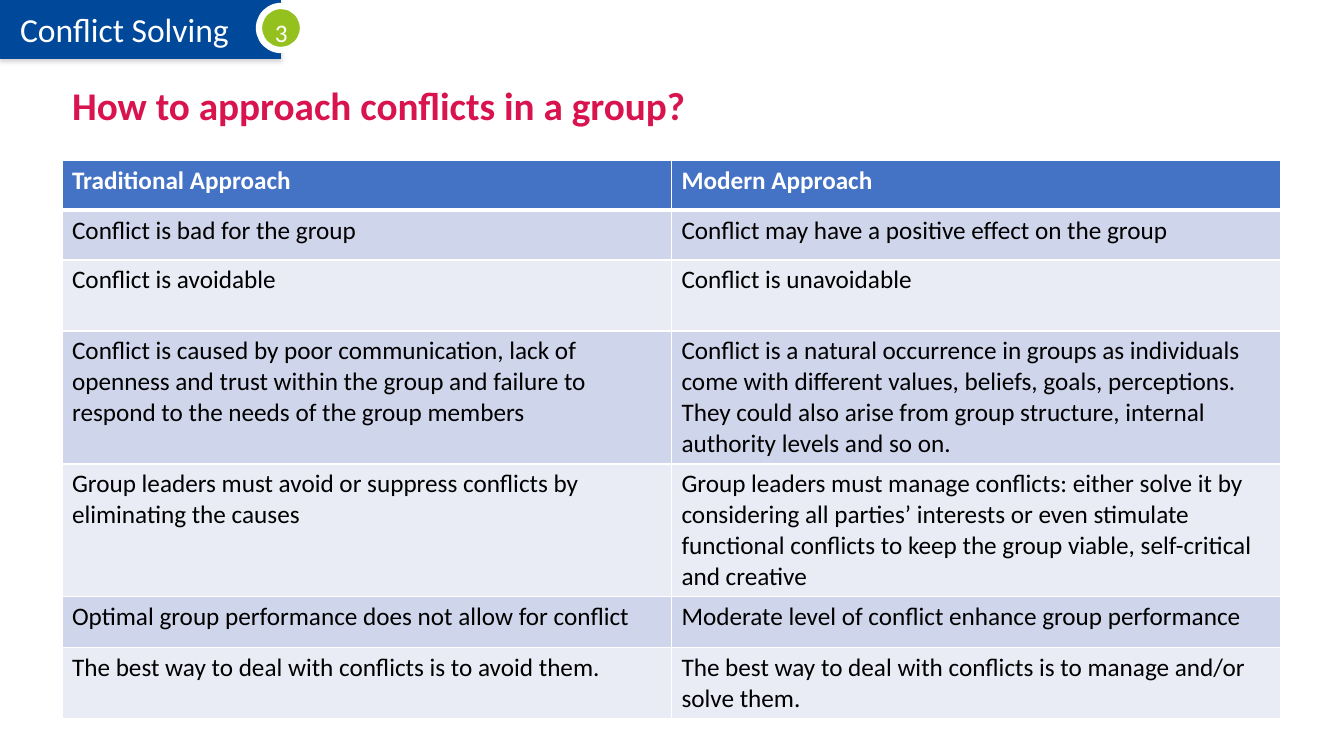
from lxml.etree import SubElement
from pptx import Presentation
from pptx.dml.color import RGBColor
from pptx.enum.shapes import MSO_SHAPE
from pptx.enum.text import MSO_ANCHOR, PP_ALIGN
from pptx.oxml import parse_xml
from pptx.oxml.ns import nsdecls, qn
from pptx.util import Pt

PX = 914400 / 100.8
NAVY = RGBColor(0x00, 0x48, 0x99)
GREEN = RGBColor(0x95, 0xC1, 0x1F)
CRIMSON = RGBColor(0xD8, 0x13, 0x4D)
BLUE = RGBColor(0x44, 0x72, 0xC4)
BAND_DARK = RGBColor(0xCF, 0xD5, 0xEA)
BAND_LIGHT = RGBColor(0xE9, 0xEB, 0xF5)
WHITE = RGBColor(0xFF, 0xFF, 0xFF)
BLACK = RGBColor(0x00, 0x00, 0x00)


def px(*lengths):
    """Turn pixel lengths into a list of EMU lengths."""
    return [round(n * PX) for n in lengths]


def write(tf, text, size=18, color=BLACK, bold=False, spacing=1.0, anchor=MSO_ANCHOR.TOP):
    tf.word_wrap = True
    tf.vertical_anchor = anchor
    p = tf.paragraphs[0]
    p.alignment = PP_ALIGN.LEFT
    p.line_spacing = spacing
    r = p.add_run()
    r.text = text
    r.font.name = "Calibri"
    r.font.size = Pt(size)
    r.font.bold = bold
    r.font.color.rgb = color


prs = Presentation()
prs.slide_width, prs.slide_height = px(1344, 756)
slide = prs.slides.add_slide(prs.slide_layouts[5])

# Section banner with its numbered badge
banner = slide.shapes.add_shape(MSO_SHAPE.RECTANGLE, *px(0, 0, 281, 59))
banner.fill.solid()
banner.fill.fore_color.rgb = NAVY
banner.line.fill.background()
banner.shadow.inherit = False
effects = banner.element.spPr.find(qn("a:effectLst"))
effects.append(parse_xml(
    f'<a:outerShdw {nsdecls("a")} blurRad="39370" dist="22860" dir="5400000" rotWithShape="0">'
    '<a:srgbClr val="808080"><a:alpha val="35000"/></a:srgbClr></a:outerShdw>'))
banner.text_frame.margin_left = px(20)[0]
write(banner.text_frame, "Conflict Solving", size=24, color=WHITE, anchor=MSO_ANCHOR.MIDDLE)

badge = slide.shapes.add_shape(MSO_SHAPE.OVAL, *px(259, 6, 44, 44))
badge.fill.solid()
badge.fill.fore_color.rgb = GREEN
badge.line.color.rgb = WHITE
badge.line.width = Pt(4.5)
badge.shadow.inherit = False

number = slide.shapes.add_textbox(*px(265, -3, 35, 51))
write(number.text_frame, "3", color=WHITE, spacing=1.5)

title = slide.shapes.title
title.left, title.top, title.width, title.height = px(62, 75, 1219, 66)
write(title.text_frame, "How to approach conflicts in a group?", size=28, color=CRIMSON,
      bold=True, spacing=0.9, anchor=MSO_ANCHOR.MIDDLE)

# Comparison table: row height, traditional view, modern view
ROWS = [
    (50, "Traditional Approach", "Modern Approach"),
    (50, "Conflict is bad for the group", "Conflict may have a positive effect on the group"),
    (71, "Conflict is avoidable", "Conflict is unavoidable"),
    (133, "Conflict is caused by poor communication, lack of openness and trust within the group "
          "and failure to respond to the needs of the group members",
     "Conflict is a natural occurrence in groups as individuals come with different values, "
     "beliefs, goals, perceptions. They could also arise from group structure, internal "
     "authority levels and so on."),
    (133, "Group leaders must avoid or suppress conflicts by eliminating the causes",
     "Group leaders must manage conflicts: either solve it by considering all parties’ interests "
     "or even stimulate functional conflicts to keep the group viable, self-critical and creative"),
    (51, "Optimal group performance does not allow for conflict",
     "Moderate level of conflict enhance group performance"),
    (71, "The best way to deal with conflicts is to avoid them.",
     "The best way to deal with conflicts is to manage and/or solve them."),
]
height = sum(row[0] for row in ROWS)
table = slide.shapes.add_table(len(ROWS), 2, *px(62, 160, 1219, height)).table
for i, (row_height, *texts) in enumerate(ROWS):
    table.rows[i].height = px(row_height)[0]
    header = i == 0
    for j, text in enumerate(texts):
        cell = table.cell(i, j)
        write(cell.text_frame, text, color=WHITE if header else BLACK, bold=header)
        tcPr = cell._tc.get_or_add_tcPr()
        for side in ("L", "R", "T", "B"):
            thick = (i, side) in ((0, "B"), (1, "T"))
            ln = SubElement(tcPr, qn(f"a:ln{side}"), w=str(Pt(3 if thick else 1)))
            SubElement(SubElement(ln, qn("a:solidFill")), qn("a:srgbClr"), val=str(WHITE))
        cell.fill.solid()
        cell.fill.fore_color.rgb = BLUE if header else BAND_DARK if i % 2 else BAND_LIGHT

prs.save("out.pptx")
